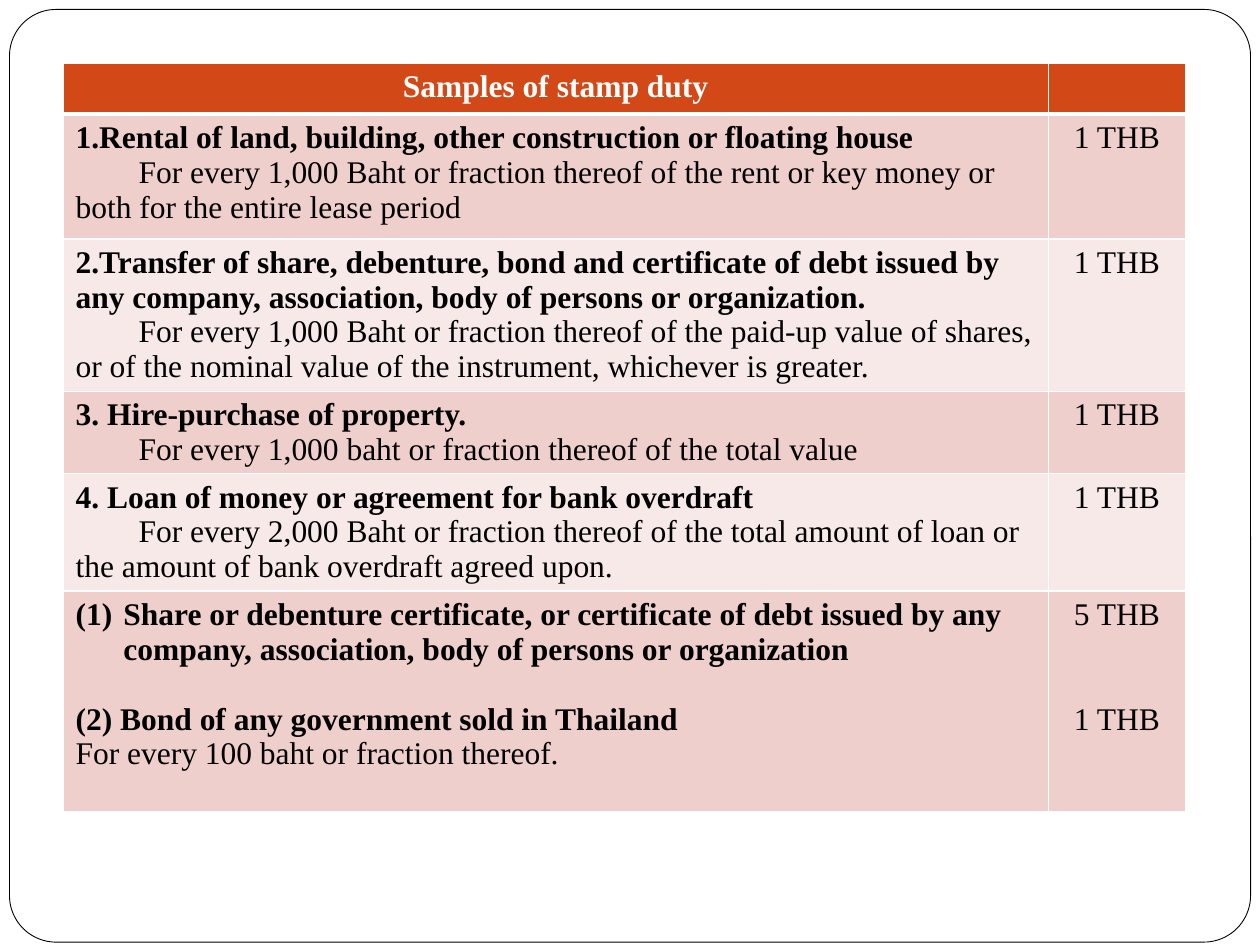
from lxml import etree
from pptx import Presentation
from pptx import util as u
from pptx.dml.color import RGBColor
from pptx.enum import shapes, text
from pptx.oxml.ns import qn

WIDTH, HEIGHT = 10, 7.5
FONT, SIZE, LINE = "Times New Roman", 18, 20
COLORS = {"paper": "FFFFFF", "ink": "000000", "header": "D34817",
          "odd": "EFCFCC", "even": "F7E9E8"}
COLUMN_SHARES = (0.782, 0.109)
HEADER_HEIGHT = 0.39
FIRST_LINE, HANGING = 0.5, 0.38

DUTIES = [
    (0.99,
     [("title", "1.Rental of land, building, other construction or floating house"),
      ("detail", "For every 1,000 Baht or fraction thereof of the rent or key money or both "
                 "for the entire lease period")],
     ["1 THB"]),
    (1.21,
     [("title", "2.Transfer of share, debenture, bond and certificate of debt issued by any "
                "company, association, body of persons or organization."),
      ("detail", "For every 1,000 Baht or fraction thereof of the paid-up value of shares, or of "
                 "the nominal value of the instrument, whichever is greater.")],
     ["1 THB"]),
    (0.65,
     [("title", "3. Hire-purchase of property."),
      ("detail", "For every 1,000 baht or fraction thereof of the total value")],
     ["1 THB"]),
    (0.93,
     [("title", "4. Loan of money or agreement for bank overdraft"),
      ("detail", "For every 2,000 Baht or fraction thereof of the total amount of loan or the "
                 "amount of bank overdraft agreed upon.")],
     ["1 THB"]),
    (1.75,
     [("numbered", "Share or debenture certificate, or certificate of debt issued by any "
                   "company, association, body of persons or organization"),
      ("second", "(2) Bond of any government sold in Thailand"),
      ("plain", "For every 100 baht or fraction thereof.")],
     ["5 THB", "1 THB"]),
]


def color(name):
    return RGBColor.from_string(COLORS[name])


def add_frame(page):
    margin = 0.01 * HEIGHT
    frame = page.shapes.add_shape(
        shapes.MSO_SHAPE.ROUNDED_RECTANGLE, u.Inches(margin), u.Inches(margin),
        u.Inches(WIDTH - 2 * margin), u.Inches(HEIGHT - 1.3 * margin))
    frame.adjustments[0] = 0.05
    frame.shadow.inherit = False
    frame.fill.solid()
    frame.fill.fore_color.rgb = color("paper")
    frame.line.color.rgb = color("ink")
    frame.line.width = u.Pt(0.5)


def style_cell(cell, fill, bottom=1):
    cell.fill.solid()
    cell.fill.fore_color.rgb = color(fill)
    properties = cell._tc.get_or_add_tcPr()
    for place, (side, width) in enumerate(zip("LRTB", (1, 1, 1, bottom))):
        border = etree.Element(qn(f"a:ln{side}"), w=str(u.Pt(width)))
        paint = etree.SubElement(border, qn("a:solidFill"))
        etree.SubElement(paint, qn("a:srgbClr"), val=COLORS["paper"])
        properties.insert(place, border)


def add_para(cell, words, ink="ink", bold=False, centred=False):
    frame = cell.text_frame
    para = frame.paragraphs[0]
    if para.runs:
        para = frame.add_paragraph()
    para.alignment = text.PP_ALIGN.CENTER if centred else text.PP_ALIGN.LEFT
    span = para.add_run()
    span.text = words
    span.font.name = FONT
    span.font.size = u.Pt(SIZE)
    span.font.bold = bold
    span.font.color.rgb = color(ink)
    return para


def indent(para, left, first):
    properties = para._p.get_or_add_pPr()
    properties.set("marL", str(u.Inches(left)))
    properties.set("indent", str(u.Inches(first)))
    return properties


def add_entry(cell, kind, words):
    para = add_para(cell, words, bold=kind not in ("detail", "plain"))
    if kind == "detail":
        indent(para, 0, FIRST_LINE)
    elif kind == "numbered":
        properties = indent(para, HANGING, -HANGING)
        etree.SubElement(properties, qn("a:buFont"), typeface="+mj-lt")
        etree.SubElement(properties, qn("a:buAutoNum"), type="arabicParenBoth")
    elif kind == "second":
        indent(para, HANGING, -HANGING)
        para.space_before = u.Pt(LINE)


def add_duty_table(page):
    heights = [HEADER_HEIGHT] + [duty[0] for duty in DUTIES]
    table = page.shapes.add_table(
        len(heights), len(COLUMN_SHARES), u.Inches(0.05 * WIDTH), u.Inches(0.5),
        u.Inches(sum(COLUMN_SHARES) * WIDTH), u.Inches(sum(heights))).table
    for column, share in zip(table.columns, COLUMN_SHARES):
        column.width = u.Inches(share * WIDTH)
    for row, height in zip(table.rows, heights):
        row.height = u.Inches(height)

    for cell in table.rows[0].cells:
        style_cell(cell, "header", bottom=3)
    add_para(table.cell(0, 0), "Samples of stamp duty", "paper", bold=True, centred=True)

    for number, (_, entries, amounts) in enumerate(DUTIES, 1):
        duty, rate = table.rows[number].cells
        for cell in (duty, rate):
            style_cell(cell, "odd" if number % 2 else "even")
        for kind, words in entries:
            add_entry(duty, kind, words)
        for place, amount in enumerate(amounts):
            para = add_para(rate, amount, centred=True)
            para.space_before = u.Pt(2 * LINE * place)


def main():
    deck = Presentation()
    deck.slide_width, deck.slide_height = u.Inches(WIDTH), u.Inches(HEIGHT)
    page = deck.slides.add_slide(deck.slide_layouts[6])
    add_frame(page)
    add_duty_table(page)
    deck.save("out.pptx")


if __name__ == "__main__":
    main()
